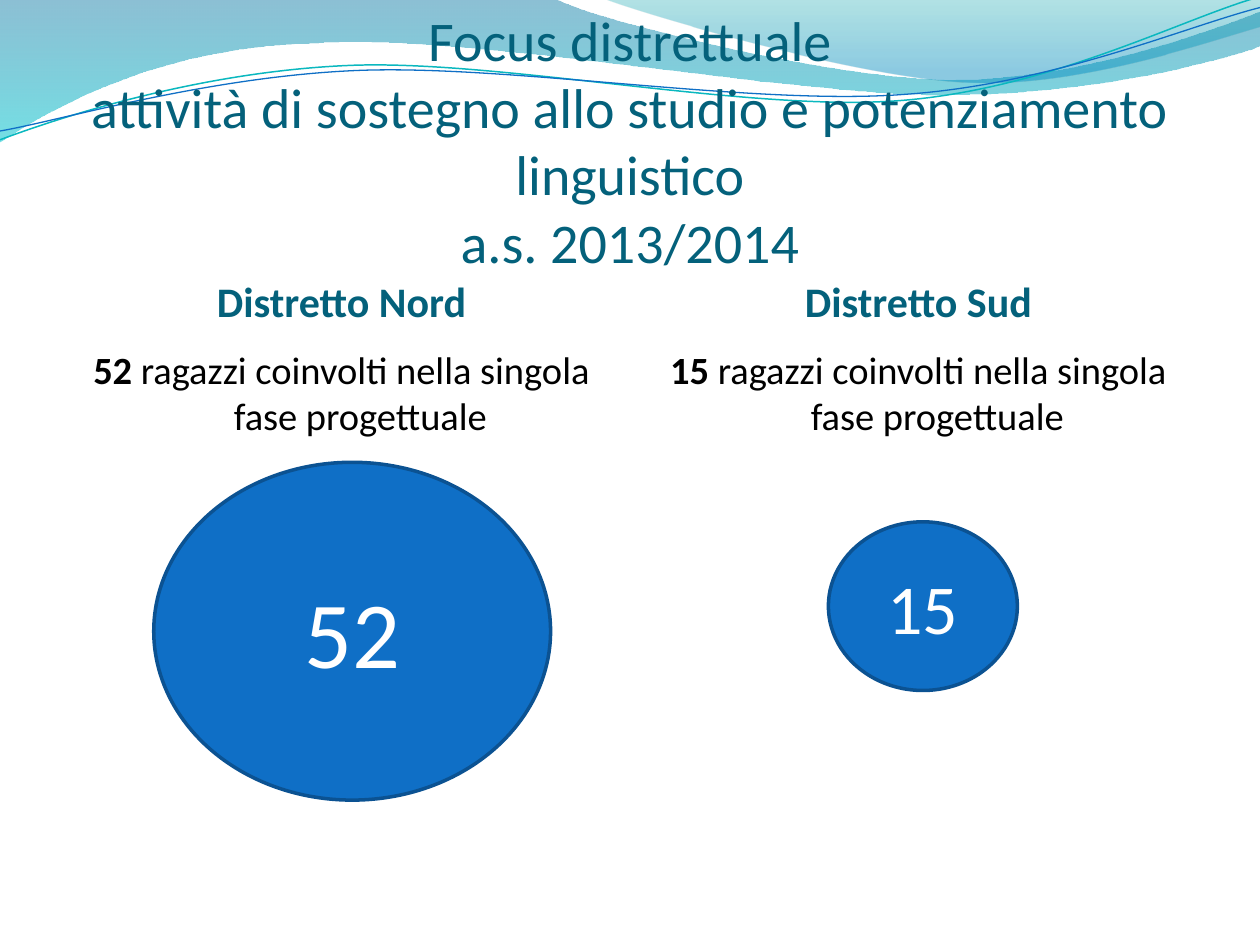
"""Builds the slide comparing study support activities in the two districts."""
import lxml.etree
import pptx
import pptx.dml.color
import pptx.enum.shapes
import pptx.enum.text
import pptx.oxml.ns
import pptx.util

Cm = pptx.util.Cm
Pt = pptx.util.Pt
qn = pptx.oxml.ns.qn
ALIGN = pptx.enum.text.PP_ALIGN
ANCHOR = pptx.enum.text.MSO_ANCHOR

FONT = "Calibri"
COLORS = {
    "title": "04617B", "text": "000000", "white": "FFFFFF",
    "circle": "0F6FC6", "circle_line": "0B5292",
    "wave_blue": "0074A1", "wave_cyan": "00C6CF",
    "crest_teal": "00A1A9", "crest_blue": "008BBF",
    "line_teal": "0AB8BF", "line_blue": "0F6FC6",
}

WAVES = [
    {"start": (0, 0),
     "steps": [(4.4, -0.01), (4.76, 0.17, 6.64, 0.63, 7.58, 0.63),
               (8.53, 0.63, 9.58, 0.26, 10, 0.09), (10.01, 0.36),
               (9.83, 0.44, 8.7, 0.76, 7.46, 0.75),
               (6.22, 0.75, 3.82, 0.28, 2.57, 0.34),
               (1.29, 0.36, 0.46, 0.83, -0.01, 1.13), (0, 0)],
     "stops": [(0, "wave_blue", 45), (1, "wave_cyan", 55)]},
    {"start": (4.79, -0.01),
     "steps": [(5.09, 0.11, 6.82, 0.62, 7.69, 0.65),
               (8.56, 0.69, 9.61, 0.32, 10, 0.21), (10, 0), (4.79, -0.01)],
     "stops": [(0, "crest_teal", 30), (0.8, "crest_blue", 45)]},
    {"start": (0, 1.11),
     "steps": [(0.48, 0.93, 1.58, 0.57, 2.77, 0.52),
               (3.95, 0.47, 5.93, 0.89, 7.13, 0.8),
               (8.33, 0.71, 9.38, 0.15, 9.98, -0.02)],
     "line": ("line_teal", 0.85)},
    {"start": (0, 1.04),
     "steps": [(0.47, 0.96, 1.64, 0.61, 2.83, 0.56),
               (4.03, 0.51, 5.97, 0.84, 7.17, 0.75),
               (8.36, 0.67, 9.41, 0.21, 10, 0.06)],
     "line": ("line_blue", 0.75)},
]

DISTRICTS = [
    {"name": "Distretto Nord", "count": "52", "left": 1.27,
     "circle": (1.83, 4.17, 8, 6.81), "size": 54},
    {"name": "Distretto Sud", "count": "15", "left": 12.9,
     "circle": (3.8, 5.37, 3.81, 3.4), "size": 40},
]


def rgb(name):
    """Return the named colour."""
    return pptx.dml.color.RGBColor.from_string(COLORS[name])


def format_paragraph(paragraph, size, color, bold=None):
    """Centre a paragraph and set its font."""
    paragraph.alignment = ALIGN.CENTER
    paragraph.font.name = FONT
    paragraph.font.size = Pt(size)
    paragraph.font.color.rgb = rgb(color)
    paragraph.font.bold = bold


def format_frame(frame, anchor, side, top, bottom):
    """Set wrapping, anchor and margins of a text frame."""
    frame.word_wrap = True
    frame.auto_size = pptx.enum.text.MSO_AUTO_SIZE.NONE
    frame.vertical_anchor = anchor
    frame.margin_left = frame.margin_right = Cm(side)
    frame.margin_top, frame.margin_bottom = Cm(top), Cm(bottom)


def add_curve(slide, start, steps, left, top, unit, closed):
    """Draw an outline of straight steps (x, y) and cubic steps of three points."""
    def place(x, y):
        return left + x * unit, top + y * unit

    points = [place(*step[index:index + 2])
              for step in steps for index in range(0, len(step), 2)]
    builder = slide.shapes.build_freeform(*place(*start))
    builder.add_line_segments(points, close=closed)
    shape = builder.convert_to_shape()
    segments = iter(list(shape._element.iter(qn("a:lnTo"))))
    for step in steps:
        first = next(segments)
        if len(step) == 6:
            first.tag = qn("a:cubicBezTo")
            for control in (next(segments), next(segments)):
                first.append(control[0])
                control.getparent().remove(control)
    return shape


def fill_gradient(shape, stops):
    """Fill a shape from top to bottom with translucent colours."""
    shape.fill.gradient()
    shape.fill.gradient_angle = 270
    for stop, (position, color, opacity) in zip(shape.fill.gradient_stops, stops):
        stop.position = position
        stop.color.rgb = rgb(color)
    colors = shape._element.spPr.iter(qn("a:srgbClr"))
    for element, (position, color, opacity) in zip(colors, stops):
        alpha = lxml.etree.SubElement(element, qn("a:alpha"))
        alpha.set("val", str(opacity * 1000))


def add_waves(slide, left, top, width):
    """Draw the wave band, measured in tenths of its width."""
    for wave in WAVES:
        shape = add_curve(slide, wave["start"], wave["steps"],
                          left, top, width / 10, "stops" in wave)
        shape.shadow.inherit = False
        if "stops" in wave:
            fill_gradient(shape, wave["stops"])
            shape.line.fill.background()
        else:
            color, weight = wave["line"]
            shape.fill.background()
            shape.line.color.rgb = rgb(color)
            shape.line.width = Pt(weight)


def add_title(slide, left, top, width, height):
    """Place the title in front of the waves."""
    title = slide.shapes.title
    slide.shapes._spTree.append(title._element)
    title.left, title.top, title.width, title.height = left, top, width, height
    format_frame(title.text_frame, ANCHOR.BOTTOM, 0, 0.13, 0)
    title.text_frame.text = ("Focus distrettuale\v"
                             "attività di sostegno allo studio e potenziamento linguistico\v"
                             "a.s. 2013/2014")
    format_paragraph(title.text_frame.paragraphs[0], 32, "title")


def add_district(slide, district, left, top, width):
    """Place the heading, sentence and circle of one district."""
    heading = slide.shapes.add_textbox(left, top, width, Cm(1.83)).text_frame
    format_frame(heading, ANCHOR.MIDDLE, 0.13, 0, 0)
    heading.text = district["name"]
    format_paragraph(heading.paragraphs[0], 24, "title", True)

    body = slide.shapes.add_textbox(left, top + Cm(1.83), width, Cm(10.69)).text_frame
    format_frame(body, ANCHOR.TOP, 0.25, 0, 0.13)
    paragraph = body.paragraphs[0]
    format_paragraph(paragraph, 22, "text")
    properties = paragraph._p.get_or_add_pPr()
    properties.set("marL", str(Cm(0.76)))
    properties.set("indent", str(-Cm(0.76)))
    for text, bold in ((district["count"], True),
                       (" ragazzi coinvolti nella singola fase progettuale", False)):
        run = paragraph.add_run()
        run.text = text
        run.font.bold = bold

    x, y, circle_width, circle_height = map(Cm, district["circle"])
    circle = slide.shapes.add_shape(pptx.enum.shapes.MSO_SHAPE.OVAL,
                                    left + x, top + y, circle_width, circle_height)
    circle.shadow.inherit = False
    circle.fill.solid()
    circle.fill.fore_color.rgb = rgb("circle")
    circle.line.color.rgb = rgb("circle_line")
    circle.line.width = Pt(2)
    circle.text_frame.vertical_anchor = ANCHOR.MIDDLE
    circle.text_frame.text = district["count"]
    format_paragraph(circle.text_frame.paragraphs[0], district["size"], "white")


def main():
    """Build and save the presentation."""
    presentation = pptx.Presentation()
    presentation.slide_width, presentation.slide_height = Cm(25.4), Cm(19.05)
    slide = presentation.slides.add_slide(presentation.slide_layouts[5])
    add_waves(slide, 0, 0, presentation.slide_width)
    add_title(slide, Cm(1.27), Cm(1.95), Cm(22.86), Cm(3.58))
    for district in DISTRICTS:
        add_district(slide, district, Cm(district["left"]), Cm(5.15), Cm(11.23))
    presentation.save("out.pptx")


if __name__ == "__main__":
    main()
